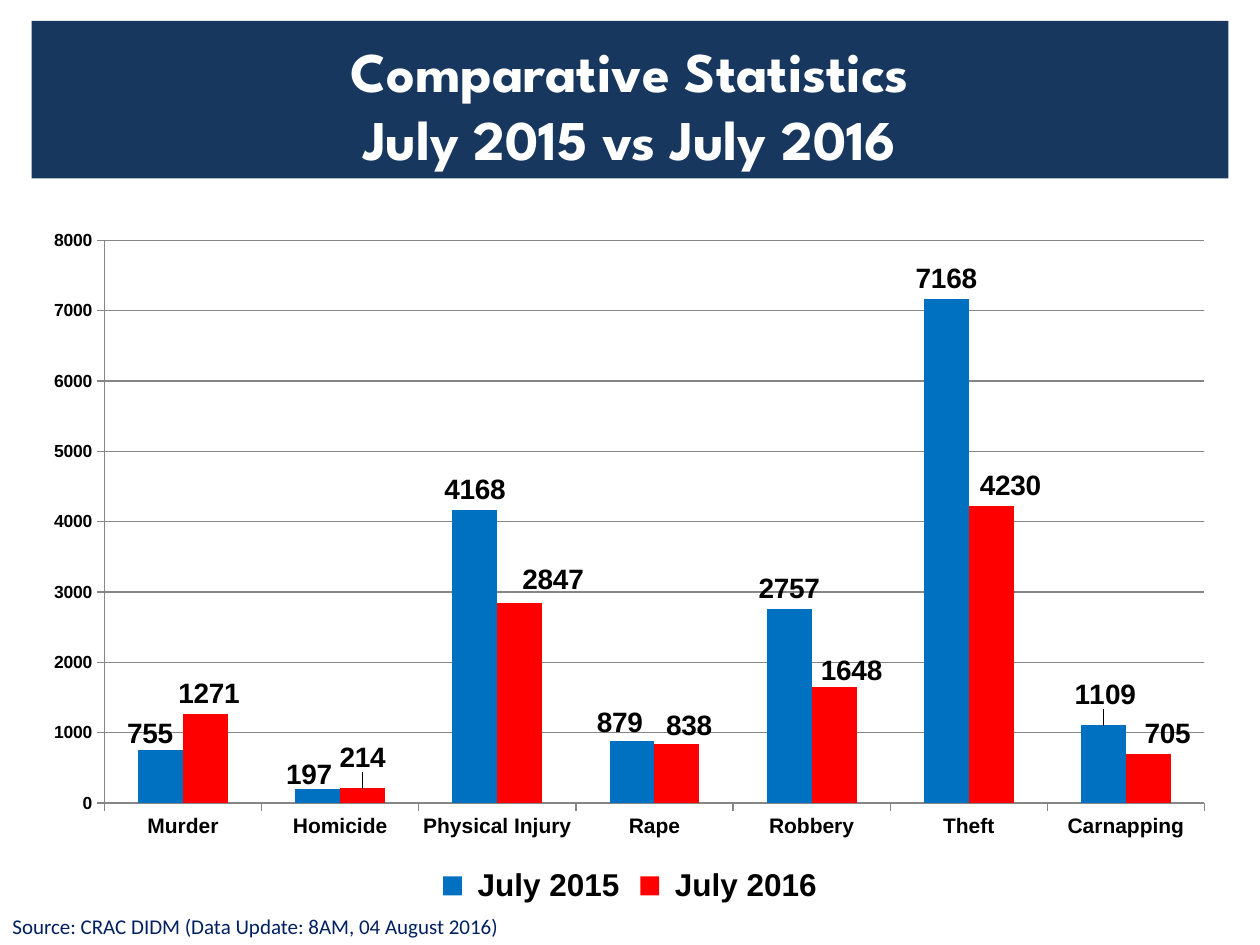
from dataclasses import dataclass

from lxml.etree import SubElement
from pptx import Presentation
from pptx.chart.data import CategoryChartData
from pptx.dml.color import RGBColor
from pptx.enum.chart import XL_CHART_TYPE, XL_LABEL_POSITION, XL_LEGEND_POSITION, XL_TICK_MARK
from pptx.enum.text import MSO_ANCHOR, MSO_AUTO_SIZE, PP_ALIGN
from pptx.oxml import parse_xml
from pptx.oxml.ns import nsdecls, qn
from pptx.util import Pt


@dataclass(frozen=True)
class Theme:
    banner: RGBColor = RGBColor(0x17, 0x37, 0x5E)
    white: RGBColor = RGBColor(0xFF, 0xFF, 0xFF)
    black: RGBColor = RGBColor(0, 0, 0)
    source: RGBColor = RGBColor(0x00, 0x20, 0x60)
    grid: RGBColor = RGBColor(0x86, 0x86, 0x86)
    bars: tuple = (RGBColor(0x00, 0x70, 0xC0), RGBColor(0xFF, 0, 0))
    title_font: str = "League Spartan"
    body_font: str = "Calibri"
    chart_font: str = "Arial"
    title_size: int = 32
    source_size: int = 12
    value_size: int = 10
    category_size: int = 12
    label_size: int = 16
    legend_size: int = 18


THEME = Theme()
CHART_WIDTH, CHART_HEIGHT = 684, 396
CATEGORIES = ["Murder", "Homicide", "Physical Injury", "Rape", "Robbery", "Theft", "Carnapping"]
COUNTS = {
    " July 2015": [755, 197, 4168, 879, 2757, 7168, 1109],
    " July 2016": [1271, 214, 2847, 838, 1648, 4230, 705],
}
LABEL_SHIFTS = [
    {0: (-6, 2), 1: (-5, 3), 3: (-7, 1), 6: (1, -6)},
    {0: (2, 0), 1: (0, -6), 2: (19, -2), 3: (7, 1), 4: (10, 2), 5: (11, 0), 6: (11, 0)},
]


def place(box, left, top, width, height):
    box.left, box.top, box.width, box.height = Pt(left), Pt(top), Pt(width), Pt(height)


def style_font(font, size, color, name, bold=False):
    font.size = Pt(size)
    font.color.rgb = color
    font.name = name
    font.bold = bold


def style_chart_font(font, size):
    style_font(font, size, THEME.black, THEME.chart_font, True)


def add_title(page, lines):
    box = page.shapes.title
    place(box, 18, 12, 684, 90)
    box.fill.solid()
    box.fill.fore_color.rgb = THEME.banner
    frame = box.text_frame
    frame.auto_size = MSO_AUTO_SIZE.NONE
    frame.vertical_anchor = MSO_ANCHOR.MIDDLE
    frame.margin_top, frame.margin_bottom = Pt(8), Pt(3)
    for index, line in enumerate(lines):
        para = frame.add_paragraph() if index else frame.paragraphs[0]
        para.alignment = PP_ALIGN.CENTER
        span = para.add_run()
        span.text = line
        style_font(span.font, THEME.title_size, THEME.white, THEME.title_font, True)


def add_source(page, text):
    box = page.shapes.add_textbox(Pt(0), Pt(518.4), Pt(300), Pt(21.6))
    frame = box.text_frame
    frame.word_wrap = True
    frame.vertical_anchor = MSO_ANCHOR.MIDDLE
    span = frame.paragraphs[0].add_run()
    span.text = text
    style_font(span.font, THEME.source_size, THEME.source, THEME.body_font)


def manual_layout(**settings):
    layout = parse_xml(f"<c:layout {nsdecls('c')}><c:manualLayout/></c:layout>")
    for tag, value in settings.items():
        SubElement(layout[0], qn(f"c:{tag}")).set("val", str(value))
    return layout


def set_plot_area(chart):
    area = chart._chartSpace.chart.plotArea
    for old in area.findall(qn("c:layout")):
        area.remove(old)
    area.insert(0, manual_layout(layoutTarget="inner", xMode="edge", yMode="edge",
                                 x=0.061, y=0.034, w=0.919, h=0.812))


def style_axis(axis, size):
    style_chart_font(axis.tick_labels.font, size)
    axis.major_tick_mark = XL_TICK_MARK.OUTSIDE
    axis.minor_tick_mark = XL_TICK_MARK.NONE
    axis.format.line.color.rgb = THEME.grid
    axis.format.line.width = Pt(0.75)


def shift_label(series, index, shift):
    label = series.points[index].data_label
    style_chart_font(label.font, THEME.label_size)
    label.position = XL_LABEL_POSITION.OUTSIDE_END
    across, down = shift
    layout = manual_layout(x=round(across / CHART_WIDTH, 4), y=round(down / CHART_HEIGHT, 4))
    label._dLbl.find(qn("c:idx")).addnext(layout)


def style_series(series, color, shifts):
    series.format.fill.solid()
    series.format.fill.fore_color.rgb = color
    series.invert_if_negative = False
    labels = series.data_labels
    labels.show_value = True
    labels.position = XL_LABEL_POSITION.OUTSIDE_END
    style_chart_font(labels.font, THEME.label_size)
    for index, shift in shifts.items():
        shift_label(series, index, shift)


def add_crime_chart(page):
    data = CategoryChartData()
    data.categories = CATEGORIES
    for name, values in COUNTS.items():
        data.add_series(name, values)
    chart = page.shapes.add_chart(XL_CHART_TYPE.COLUMN_CLUSTERED, Pt(18), Pt(124),
                                  Pt(CHART_WIDTH), Pt(CHART_HEIGHT), data).chart
    chart.has_title = False
    style_font(chart.font, THEME.value_size, THEME.black, THEME.chart_font)
    set_plot_area(chart)

    style_axis(chart.category_axis, THEME.category_size)
    values = chart.value_axis
    style_axis(values, THEME.value_size)
    values.minimum_scale, values.maximum_scale, values.major_unit = 0, 8000, 1000
    values.has_major_gridlines = True
    values.major_gridlines.format.line.color.rgb = THEME.grid
    values.major_gridlines.format.line.width = Pt(0.75)

    plot = chart.plots[0]
    plot.gap_width, plot.overlap = 150, 0
    plot.vary_by_categories = False
    for series, color, shifts in zip(plot.series, THEME.bars, LABEL_SHIFTS):
        style_series(series, color, shifts)

    chart.has_legend = True
    chart.legend.position = XL_LEGEND_POSITION.BOTTOM
    chart.legend.include_in_layout = False
    style_chart_font(chart.legend.font, THEME.legend_size)


def main():
    deck = Presentation()
    deck.slide_width, deck.slide_height = Pt(720), Pt(540)
    page = deck.slides.add_slide(deck.slide_layouts[5])
    add_title(page, ["Comparative Statistics", "July 2015 vs July 2016"])
    add_source(page, "Source: CRAC DIDM (Data Update: 8AM, 04 August 2016)")
    add_crime_chart(page)
    deck.save("out.pptx")


if __name__ == "__main__":
    main()
